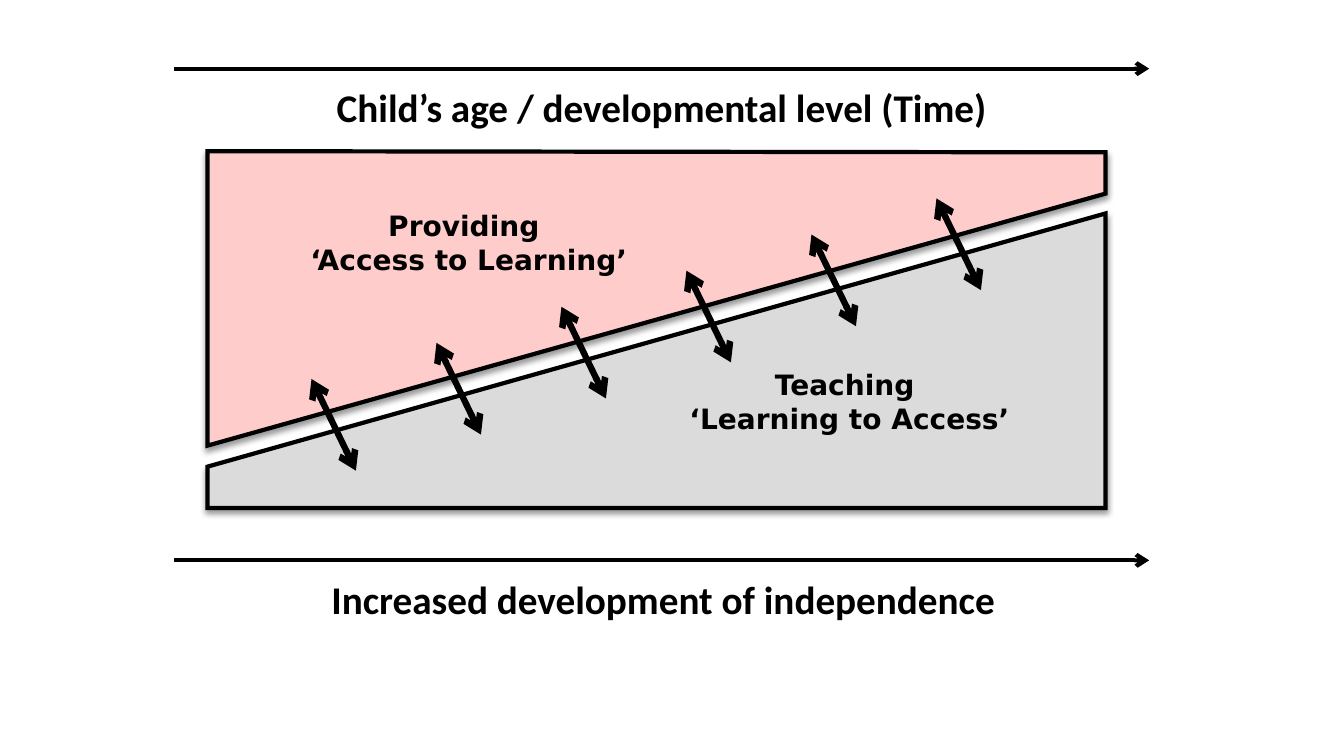
from lxml.etree import SubElement
from pptx import Presentation
from pptx.dml.color import RGBColor
from pptx.enum.shapes import MSO_CONNECTOR
from pptx.enum.text import PP_ALIGN
from pptx.oxml.ns import qn
from pptx.util import Cm, Pt

COLOURS = {"ink": "000000", "access": "FFCCCC", "teaching": "DBDBDB"}
HEADING = {"name": "Calibri", "size": Pt(28), "bold": True}
LABEL = {"name": "DejaVu Sans", "size": Pt(20), "bold": True}
HEADING_MARGINS = {"margin_left": Cm(0.33), "margin_right": Cm(0.33),
                   "margin_top": Cm(0.18), "margin_bottom": Cm(0.18)}
SHADOW = {"blurRad": Pt(4), "dist": Pt(3), "dir": 90 * 60000, "rotWithShape": 0}


def add_arrow(shapes, start, end, weight, ends):
    arrow = shapes.add_connector(
        MSO_CONNECTOR.STRAIGHT, *[Cm(value) for value in (*start, *end)])
    arrow.line.width = Pt(weight)
    arrow.line.color.rgb = RGBColor.from_string(COLOURS["ink"])
    for arrow_end in ends:
        SubElement(arrow.line._get_or_add_ln(), qn(arrow_end), type="arrow")
    SubElement(arrow._element.spPr, qn("a:effectLst"))


def add_caption(shapes, box, lines, font_format, frame_format):
    frame = shapes.add_textbox(*[Cm(value) for value in box]).text_frame
    frame.word_wrap = True
    for attribute, value in frame_format.items():
        setattr(frame, attribute, value)
    frame.text = "\n".join(lines)
    for paragraph in frame.paragraphs:
        paragraph.alignment = PP_ALIGN.CENTER
        font = paragraph.runs[0].font
        font.color.rgb = RGBColor.from_string(COLOURS["ink"])
        for attribute, value in font_format.items():
            setattr(font, attribute, value)


prs = Presentation()
prs.slide_width, prs.slide_height = Cm(33.87), Cm(19.05)
slide = prs.slides.add_slide(prs.slide_layouts[6])

# Time and independence axes with their headings
for axis_y, heading_box, heading in (
    (1.73, (3.07, 1.93, 27.2, 1.55), "Child’s age / developmental level (Time)"),
    (14.12, (4.67, 14.33, 24.08, 1.55), "Increased development of independence"),
):
    add_arrow(slide.shapes, (4.39, axis_y), (28.96, axis_y), 3, ["a:tailEnd"])
    add_caption(slide.shapes, heading_box, [heading], HEADING, HEADING_MARGINS)

# The two approaches, split along the diagonal
left, right = 5.23, 27.86
for approach, corners, label_box, lines in (
    ("teaching", [(right, 12.8), (left, 12.8), (left, 11.76), (right, 5.38)],
     (15.34, 9.14, 12.14, 1.96), ["Teaching ", "‘Learning to Access’"]),
    ("access", [(left, 3.81), (right, 3.84), (right, 4.88), (left, 11.23)],
     (6.15, 5.13, 11.33, 1.96), ["Providing ", "‘Access to Learning’"]),
):
    group = slide.shapes.add_group_shape()
    points = [(Cm(x), Cm(y)) for x, y in corners]
    builder = group.shapes.build_freeform(*points[0])
    builder.add_line_segments(points[1:], close=True)
    area = builder.convert_to_shape()
    area.fill.solid()
    area.fill.fore_color.rgb = RGBColor.from_string(COLOURS[approach])
    area.line.width = Pt(3)
    area.line.color.rgb = RGBColor.from_string(COLOURS["ink"])
    SubElement(area.line._get_or_add_ln(), qn("a:miter"), lim="800000")
    area.shadow.inherit = False
    effects = area._element.spPr.find(qn("a:effectLst"))
    shadow = SubElement(effects, qn("a:outerShdw"),
                        {key: str(value) for key, value in SHADOW.items()})
    shade = SubElement(shadow, qn("a:srgbClr"), val=COLOURS["ink"])
    SubElement(shade, qn("a:alpha"), val="40000")
    add_caption(group.shapes, label_box, lines, LABEL, {})

# Exchange arrows climbing the diagonal at equal steps
exchanges = slide.shapes.add_group_shape()
for step in range(6):
    x, y = 7.85 + 3.15 * step, 9.55 - 0.91 * step
    add_arrow(exchanges.shapes, (x, y), (x + 1.12, y + 2.31), 4.5,
              ["a:headEnd", "a:tailEnd"])

prs.save("out.pptx")
